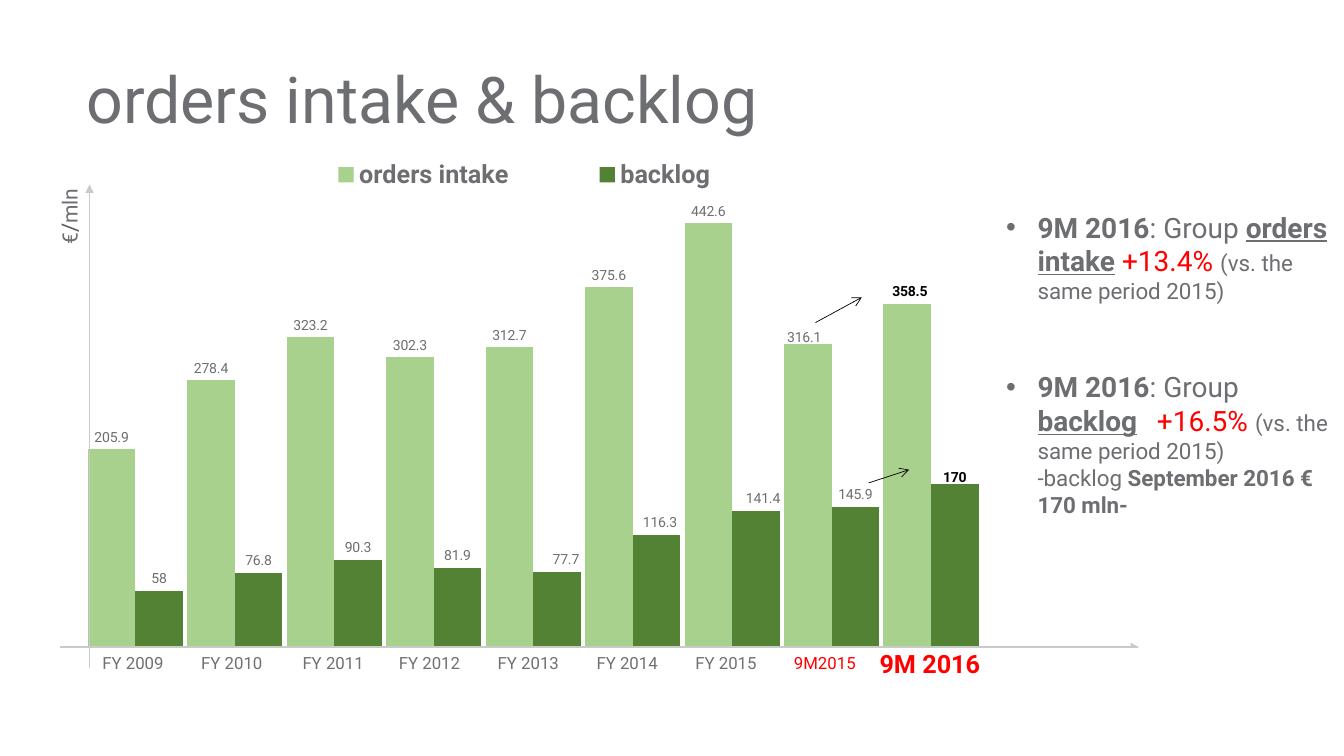
from dataclasses import dataclass

from lxml.etree import SubElement
from pptx import Presentation
from pptx.chart.data import CategoryChartData
from pptx.dml.color import RGBColor
from pptx.enum.chart import XL_CHART_TYPE, XL_LABEL_POSITION, XL_LEGEND_POSITION
from pptx.enum.shapes import MSO_CONNECTOR, MSO_SHAPE
from pptx.enum.text import MSO_ANCHOR, PP_ALIGN
from pptx.oxml import parse_xml
from pptx.oxml.ns import nsdecls, qn
from pptx.util import Pt


@dataclass(frozen=True)
class Theme:
    font: str = "Roboto"
    grey: str = "6D6E71"
    slash: str = "595959"
    label: str = "707173"
    axis: str = "C9CACC"
    red: str = "FF0000"
    black: str = "000000"
    white: str = "FFFFFF"
    title_size: float = 46
    lead_size: float = 20
    legend_size: float = 18
    body_size: float = 16
    unit_size: float = 15
    period_size: float = 12
    value_size: float = 10


theme = Theme()

TITLE = "orders intake & backlog"
SERIES = [
    ("orders intake", "A9D18E", [205.9, 278.4, 323.2, 302.3, 312.7, 375.6, 442.6, 316.1, 358.5]),
    ("backlog", "548235", [58, 76.8, 90.3, 81.9, 77.7, 116.3, 141.4, 145.9, 170]),
]
LABEL_SHIFTS = [
    {7: (-0.004, 0.01), 8: (0.003, 0)},
    {4: (0.01, 0), 5: (0.004, 0), 6: (0.008, 0), 8: (0, 0.01)},
]
LATEST = 8
PERIODS = [
    ("FY 2009", 0), ("FY 2010", 0), ("FY 2011", 1.8), ("FY 2012", 0), ("FY 2013", 0),
    ("FY 2014", 0), ("FY 2015", 0), ("9M2015", 0), ("9M 2016", 4.4),
]
UNIT = [
    ("€", theme.unit_size, theme.grey, ""),
    ("/", theme.body_size, theme.slash, ""),
    ("mln", theme.unit_size, theme.grey, ""),
]
FINDINGS = [
    [
        ("9M 2016", theme.lead_size, theme.grey, "b"),
        (": Group ", theme.lead_size, theme.grey, ""),
        ("orders intake", theme.lead_size, theme.grey, "bu"),
        (" ", theme.lead_size, theme.grey, ""),
        ("+13.4% ", theme.lead_size, theme.red, ""),
        ("(vs. the same period 2015)", theme.body_size, theme.grey, ""),
    ],
    [
        ("9M 2016", theme.lead_size, theme.grey, "b"),
        (": Group ", theme.lead_size, theme.grey, ""),
        ("backlog", theme.lead_size, theme.grey, "bu"),
        (" ", theme.lead_size, theme.grey, "w"),
        ("+16.5% ", theme.lead_size, theme.red, ""),
        ("(vs. the same period 2015)", theme.body_size, theme.grey, ""),
        None,
        ("-backlog ", theme.body_size, theme.grey, ""),
        ("September 2016 € 170 mln-", theme.body_size, theme.grey, "b"),
    ],
]
AXES = [((64, 477.4), (64, 131.8)), ((43.2, 462.2), (813.6, 462.2))]
TRENDS = [((582.5, 230.4), (615.6, 212.4)), ((620.6, 344.9), (649.4, 335.5))]
FIRST_PERIOD, PERIOD_PITCH = 95, 70.6


def style(font, size, color, bold=False):
    font.name = theme.font
    font.size = Pt(size)
    font.color.rgb = RGBColor.from_string(color)
    font.bold = bold


def add_box(slide, left, top, width, height):
    box = slide.shapes.add_textbox(Pt(left), Pt(top), Pt(width), Pt(height))
    frame = box.text_frame
    frame.word_wrap = True
    frame.margin_left = frame.margin_right = frame.margin_top = frame.margin_bottom = 0
    return box


def add_runs(paragraph, runs):
    for item in runs:
        if item is None:
            paragraph.add_line_break()
            continue
        text, size, color, marks = item
        run = paragraph.add_run()
        run.text = text
        style(run.font, size, color, "b" in marks)
        run.font.underline = "u" in marks
        if "w" in marks:
            run.font._element.set("spc", "900")


def add_line(slide, start, end, color, width, head):
    line = slide.shapes.add_connector(MSO_CONNECTOR.STRAIGHT, *(Pt(value) for value in start + end))
    line.line.color.rgb = RGBColor.from_string(color)
    line.line.width = Pt(width)
    SubElement(line.line._get_or_add_ln(), qn("a:tailEnd"), type=head)
    SubElement(line._element.spPr, qn("a:effectLst"))


def manual_layout(**values):
    parts = "".join(f'<c:{name} val="{value}"/>' for name, value in values.items())
    return parse_xml(f'<c:layout {nsdecls("c")}><c:manualLayout>{parts}</c:manualLayout></c:layout>')


def add_findings(slide):
    frame = add_box(slide, 717.1, 150, 232.6, 226).text_frame
    for index, runs in enumerate(FINDINGS):
        paragraph = frame.add_paragraph() if index else frame.paragraphs[0]
        properties = paragraph._p.get_or_add_pPr()
        properties.set("marL", str(Pt(24)))
        properties.set("indent", str(-Pt(22.5)))
        if index:
            paragraph.space_before = Pt(47)
        SubElement(properties, qn("a:buFont"), typeface="Arial")
        SubElement(properties, qn("a:buChar"), char="•")
        add_runs(paragraph, runs)


def add_order_chart(slide):
    data = CategoryChartData()
    data.categories = [str(number + 1) for number in range(len(PERIODS))]
    for name, color, values in SERIES:
        data.add_series(name, values)
    chart = slide.shapes.add_chart(
        XL_CHART_TYPE.COLUMN_CLUSTERED, Pt(61.2), Pt(108.7), Pt(639.4), Pt(403.2), data
    ).chart
    style(chart.font, 14, theme.black)
    chart.has_title = False
    chart.has_legend = True
    chart.legend.position = XL_LEGEND_POSITION.BOTTOM
    chart.legend.include_in_layout = False
    style(chart.legend.font, theme.legend_size, theme.grey, True)
    chart.legend._element.find(qn("c:legendPos")).addnext(
        manual_layout(xMode="edge", yMode="edge", x=0.19, y=0.01, w=0.6, h=0.06))
    chart.category_axis.visible = chart.value_axis.visible = False
    chart.value_axis.has_major_gridlines = False
    chart.value_axis.minimum_scale, chart.value_axis.maximum_scale = 0, 500
    area = chart._chartSpace.chart.plotArea
    for layout in area.findall(qn("c:layout")):
        area.remove(layout)
    area.insert(0, manual_layout(
        layoutTarget="inner", xMode="edge", yMode="edge", x=0, y=0.029, w=1, h=0.846))
    plot = chart.plots[0]
    plot.vary_by_categories = False
    plot.gap_width, plot.overlap = 9, 0
    for series, (name, color, values), shifts in zip(plot.series, SERIES, LABEL_SHIFTS):
        series.format.fill.solid()
        series.format.fill.fore_color.rgb = RGBColor.from_string(color)
        labels = series.data_labels
        labels.show_value = True
        labels.position = XL_LABEL_POSITION.OUTSIDE_END
        style(labels.font, theme.value_size, theme.grey)
        for point, (across, down) in shifts.items():
            label = series.points[point].data_label
            latest = point == LATEST
            style(label.font, theme.value_size, theme.black if latest else theme.grey, latest)
            label.position = XL_LABEL_POSITION.OUTSIDE_END
            element = series._element.xpath(f"c:dLbls/c:dLbl[c:idx/@val='{point}']")[0]
            element.insert(1, manual_layout(x=across, y=down))


def add_periods(slide):
    for index, (period, shift) in enumerate(PERIODS):
        latest = index == LATEST
        center = FIRST_PERIOD + index * PERIOD_PITCH + shift
        box = add_box(slide, center - 50, 463 if latest else 466.5, 100, 22)
        paragraph = box.text_frame.paragraphs[0]
        paragraph.text = period
        paragraph.alignment = PP_ALIGN.CENTER
        color = theme.red if period.startswith("9M") else theme.label
        style(paragraph.font, theme.legend_size if latest else theme.period_size, color, latest)


def main():
    presentation = Presentation()
    presentation.slide_width, presentation.slide_height = Pt(960), Pt(540)
    slide = presentation.slides.add_slide(presentation.slide_layouts[6])
    add_findings(slide)
    title = add_box(slide, 61.9, 43.9, 672.5, 58.3).text_frame
    title.vertical_anchor = MSO_ANCHOR.MIDDLE
    title.text = TITLE
    title.paragraphs[0].line_spacing = 0.9
    style(title.paragraphs[0].font, theme.title_size, theme.grey)
    add_order_chart(slide)
    unit = add_box(slide, 25.9, 148.3, 48.2, 20.9)
    unit.rotation = 270
    unit.text_frame.paragraphs[0].alignment = PP_ALIGN.RIGHT
    add_runs(unit.text_frame.paragraphs[0], UNIT)
    for start, end in AXES:
        add_line(slide, start, end, theme.axis, 1, "triangle")
    band = slide.shapes.add_shape(MSO_SHAPE.RECTANGLE, Pt(75.6), Pt(463), Pt(787), Pt(14.4))
    band.shadow.inherit = False
    band.fill.solid()
    band.fill.fore_color.rgb = RGBColor.from_string(theme.white)
    band.line.fill.background()
    add_periods(slide)
    for start, end in TRENDS:
        add_line(slide, start, end, theme.black, 0.5, "arrow")
    presentation.save("out.pptx")


if __name__ == "__main__":
    main()
